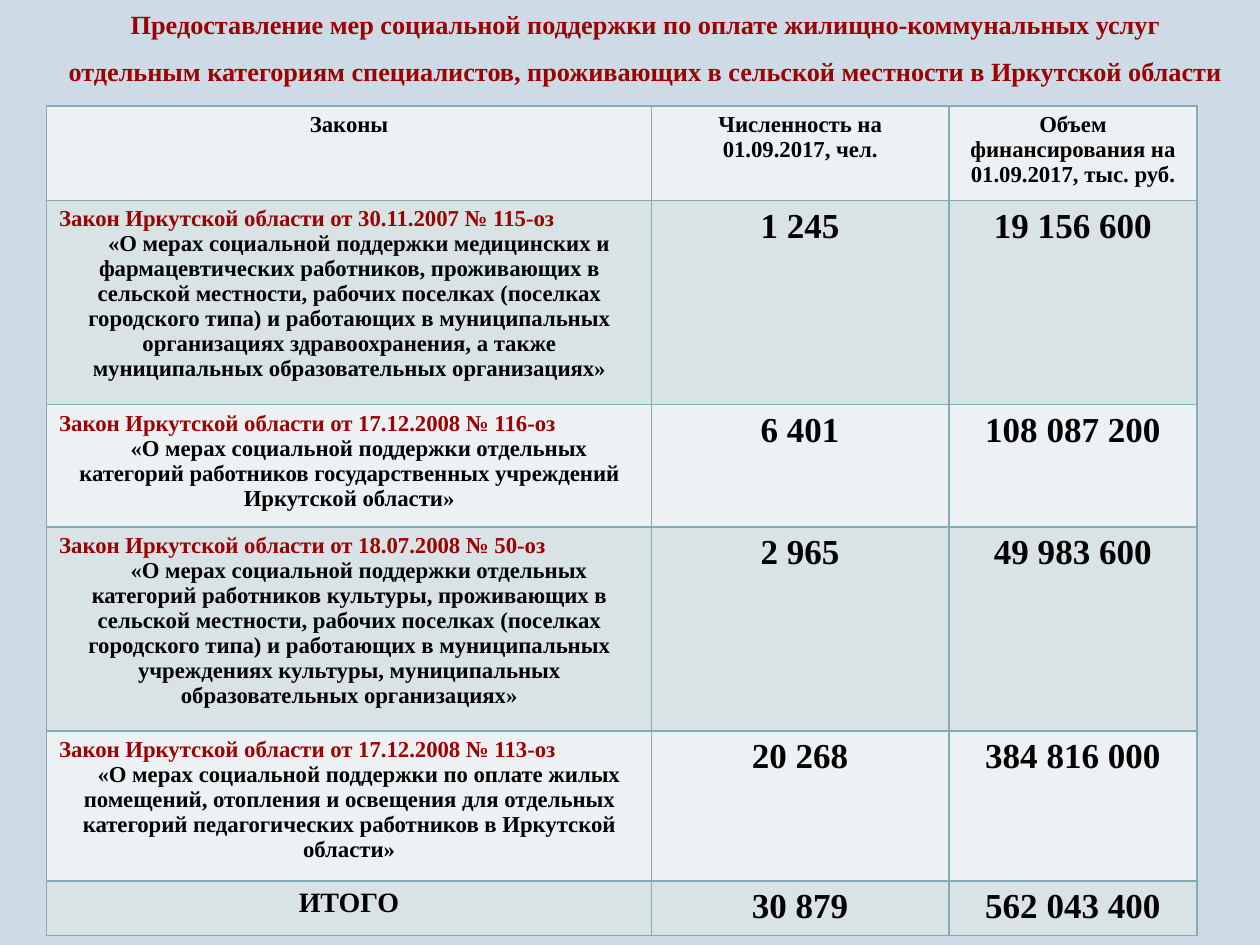
from dataclasses import dataclass

from lxml.etree import SubElement
from pptx import Presentation
from pptx.dml.color import RGBColor
from pptx.enum.text import PP_ALIGN as Align
from pptx.oxml.ns import qn
from pptx.util import Inches, Pt


@dataclass(frozen=True)
class Theme:
    font: str = "Times New Roman"
    background: str = "CEDBE6"
    accent: str = "9A0000"
    text: str = "000000"
    border: str = "84ACB6"
    bands: tuple = ("EDF1F3", "D9E3E5")
    title_size: int = 15
    body_size: int = 13
    total_size: int = 16
    number_size: int = 20


theme = Theme()


def style(paragraph, size, color=theme.text, align=Align.CENTER):
    paragraph.alignment = align
    font = paragraph.font
    font.name, font.size, font.bold = theme.font, Pt(size), True
    font.color.rgb = RGBColor.from_string(color)


def add_borders(cell):
    """Put a thin line on all four sides; lines must precede the cell fill."""
    properties = cell._tc.get_or_add_tcPr()
    for side in ("a:lnL", "a:lnR", "a:lnT", "a:lnB"):
        line = SubElement(properties, qn(side), w=str(Pt(1)))
        fill = SubElement(line, qn("a:solidFill"))
        SubElement(fill, qn("a:srgbClr"), val=theme.border)


headings = ("Законы", "Численность на 01.09.2017, чел.",
            "Объем финансирования на 01.09.2017, тыс. руб.")
laws = (
    ("Закон Иркутской области от 30.11.2007 № 115-оз",
     "«О мерах социальной поддержки медицинских и фармацевтических работников, "
     "проживающих в сельской местности, рабочих поселках (поселках городского типа) "
     "и работающих в муниципальных организациях здравоохранения, а также "
     "муниципальных образовательных организациях»",
     "1 245", "19 156 600"),
    ("Закон Иркутской области от 17.12.2008 № 116-оз",
     "«О мерах социальной поддержки отдельных категорий работников "
     "государственных учреждений Иркутской области»",
     "6 401", "108 087 200"),
    ("Закон Иркутской области от 18.07.2008 № 50-оз",
     "«О мерах социальной поддержки отдельных категорий работников культуры, "
     "проживающих в сельской местности, рабочих поселках (поселках городского типа) "
     "и работающих в муниципальных учреждениях культуры, муниципальных "
     "образовательных организациях»",
     "2 965", "49 983 600"),
    ("Закон Иркутской области от 17.12.2008 № 113-оз",
     "«О мерах социальной поддержки по оплате жилых помещений, отопления и "
     "освещения для отдельных категорий педагогических работников в Иркутской области»",
     "20 268", "384 816 000"),
)
totals = ("ИТОГО", "30 879", "562 043 400")
column_widths = (4.8, 2.36, 1.97)
row_heights = (0.75, 1.62, 0.97, 1.62, 1.19, 0.43)

prs = Presentation()
prs.slide_width, prs.slide_height = Inches(10), Inches(7.5)
slide = prs.slides.add_slide(prs.slide_layouts[6])
slide.background.fill.solid()
slide.background.fill.fore_color.rgb = RGBColor.from_string(theme.background)

title = slide.shapes.add_textbox(
    Inches(0.37), Inches(-0.11), Inches(9.51), Inches(0.86)).text_frame
title.word_wrap = True
title.text = ("Предоставление мер социальной поддержки по оплате жилищно-коммунальных услуг\v"
              "отдельным категориям специалистов, проживающих в сельской местности "
              "в Иркутской области")
title.paragraphs[0].line_spacing = 1.5
style(title.paragraphs[0], theme.title_size)
title.paragraphs[0].font.color.rgb = RGBColor.from_string(theme.accent)

support = slide.shapes.add_table(
    len(row_heights), len(column_widths), Inches(0.37), Inches(0.84),
    Inches(sum(column_widths)), Inches(sum(row_heights))).table
for column, width in zip(support.columns, column_widths):
    column.width = Inches(width)
for row, height in zip(support.rows, row_heights):
    row.height = Inches(height)

rows = [headings]
rows += [(f"{law}\n{subject}", people, funding) for law, subject, people, funding in laws]
rows.append(totals)

for r, values in enumerate(rows):
    for c, value in enumerate(values):
        cell = support.cell(r, c)
        add_borders(cell)
        cell.fill.solid()
        cell.fill.fore_color.rgb = RGBColor.from_string(theme.bands[r % 2])
        cell.text = value
        if r == 0:
            size = theme.body_size
        elif c > 0:
            size = theme.number_size
        else:
            size = theme.total_size if values is totals else theme.body_size
        for paragraph in cell.text_frame.paragraphs:
            style(paragraph, size)
        if c == 0 and 0 < r <= len(laws):
            law, subject = cell.text_frame.paragraphs
            style(law, size, theme.accent, Align.LEFT)
            subject._p.get_or_add_pPr().set("indent", str(Inches(0.15)))

prs.save("out.pptx")
